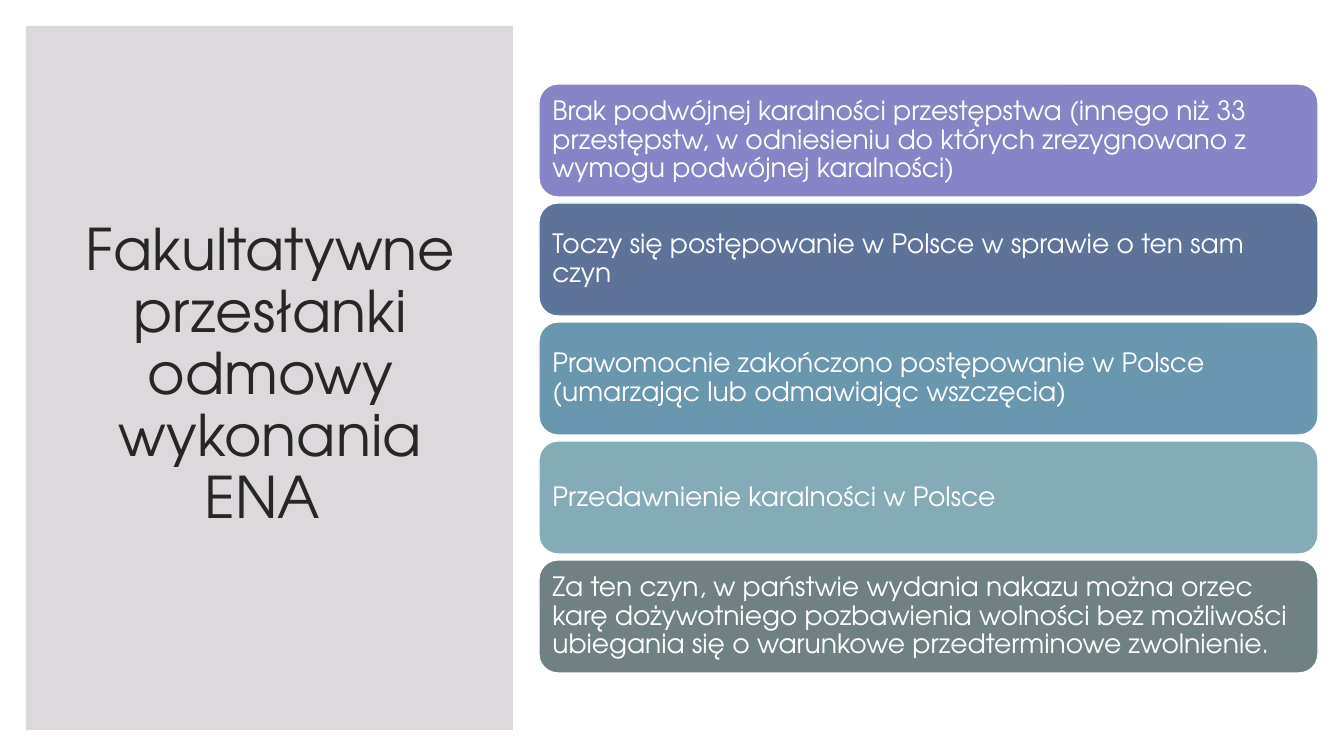
from pptx import Presentation
from pptx import util as u
from pptx.dml.color import RGBColor
from pptx.enum import shapes, text

TITLE = "Fakultatywne przesłanki odmowy wykonania ENA "
GROUNDS = [
    ("Brak podwójnej karalności przestępstwa (innego niż 33 przestępstw, "
     "w odniesieniu do których zrezygnowano z wymogu podwójnej karalności)", "8784C7"),
    ("Toczy się postępowanie w Polsce w sprawie o ten sam czyn", "5D739A"),
    ("Prawomocnie zakończono postępowanie w Polsce "
     "(umarzając lub odmawiając wszczęcia)", "6997AF"),
    ("Przedawnienie karalności w Polsce", "84ACB6"),
    ("Za ten czyn, w państwie wydania nakazu można orzec karę dożywotniego "
     "pozbawienia wolności bez możliwości ubiegania się o warunkowe "
     "przedterminowe zwolnienie.", "6F8183"),
]
FONT = "TeX Gyre Adventor"
WHITE = "FFFFFF"
SLIDE_WIDTH, SLIDE_HEIGHT = 1344, 756
PANEL = (26, 26, 487, 704)
TITLE_BOX = (63, 61, 415, 629)
CARD_LEFT, CARD_TOP, CARD_WIDTH, CARD_HEIGHT = 539, 84, 779, 113
CARD_STEP = 119


def px(length):
    return u.Emu(round(length * 914400 / 100.8))


def color(value):
    return RGBColor.from_string(value)


def add_block(page, kind, bounds, fill, line=None):
    block = page.shapes.add_shape(kind, *map(px, bounds))
    block.shadow.inherit = False
    block.fill.solid()
    block.fill.fore_color.rgb = color(fill)
    if line:
        block.line.color.rgb = color(line)
        block.line.width = u.Pt(1)
    else:
        block.line.fill.background()
    return block


def write(box, content, size, ink, align, inset_x, inset_y):
    frame = box.text_frame
    frame.word_wrap = True
    frame.vertical_anchor = text.MSO_ANCHOR.MIDDLE
    frame.margin_left = frame.margin_right = px(inset_x)
    frame.margin_top = frame.margin_bottom = px(inset_y)
    para = frame.paragraphs[0]
    para.alignment = align
    para.line_spacing = 0.9
    span = para.add_run()
    span.text = content
    span.font.name = FONT
    span.font.size = u.Pt(size)
    span.font.color.rgb = color(ink)


def main():
    deck = Presentation()
    deck.slide_width, deck.slide_height = px(SLIDE_WIDTH), px(SLIDE_HEIGHT)
    page = deck.slides.add_slide(deck.slide_layouts[6])
    kinds = shapes.MSO_SHAPE

    add_block(page, kinds.RECTANGLE, (0, 0, SLIDE_WIDTH, SLIDE_HEIGHT), WHITE)
    add_block(page, kinds.RECTANGLE, PANEL, "DCD8DC")
    title = page.shapes.add_textbox(*map(px, TITLE_BOX))
    write(title, TITLE, size=41, ink="262626", align=text.PP_ALIGN.CENTER,
          inset_x=10, inset_y=5)

    for index, (ground, fill) in enumerate(GROUNDS):
        bounds = (CARD_LEFT, CARD_TOP + index * CARD_STEP, CARD_WIDTH, CARD_HEIGHT)
        card = add_block(page, kinds.ROUNDED_RECTANGLE, bounds, fill, line=WHITE)
        write(card, ground, size=19, ink=WHITE, align=text.PP_ALIGN.LEFT,
              inset_x=8, inset_y=8)

    deck.save("out.pptx")


if __name__ == "__main__":
    main()
